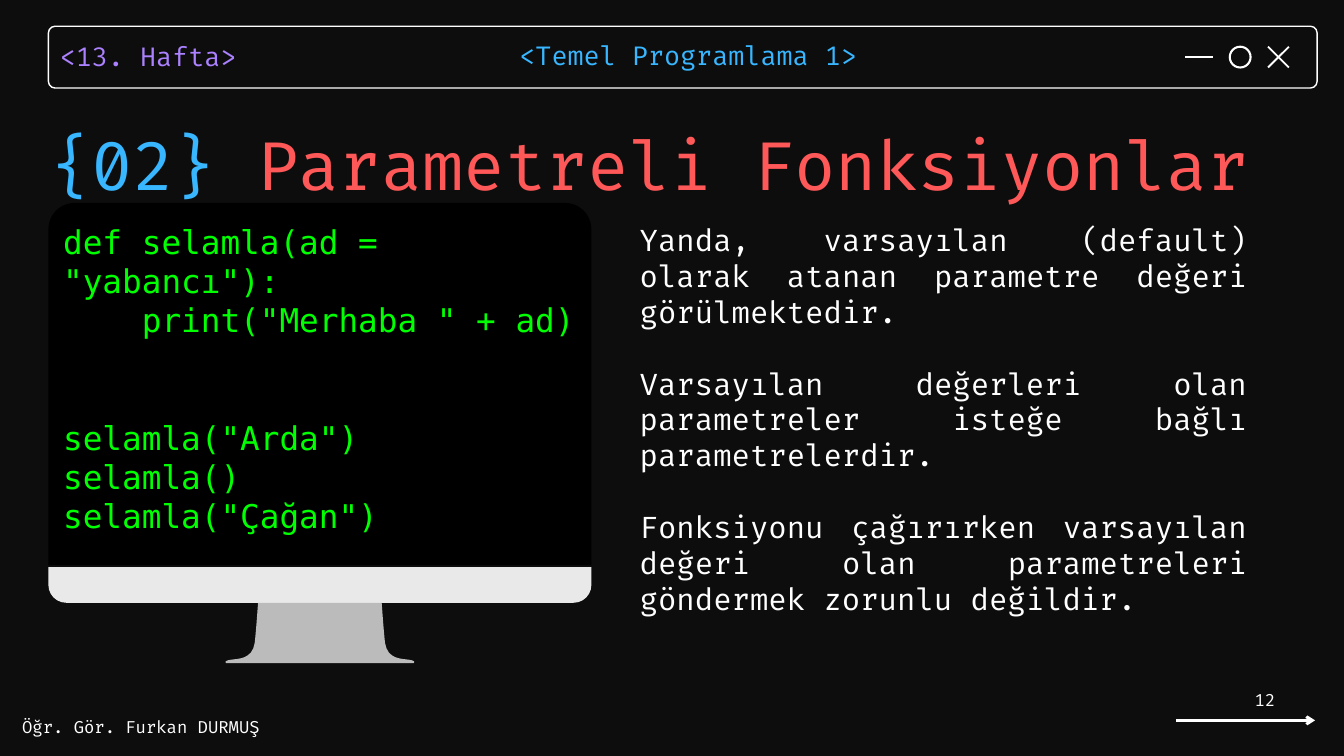
from pptx import Presentation
from pptx.dml.color import RGBColor
from pptx.enum.shapes import MSO_CONNECTOR, MSO_SHAPE
from pptx.enum.text import MSO_ANCHOR, MSO_AUTO_SIZE, PP_ALIGN
from pptx.oxml.ns import qn
from pptx.util import Inches, Pt
from lxml import etree

STRAIGHT = MSO_CONNECTOR.STRAIGHT
LEFT, RIGHT, JUSTIFY = PP_ALIGN.LEFT, PP_ALIGN.RIGHT, PP_ALIGN.JUSTIFY
TOP, MIDDLE = MSO_ANCHOR.TOP, MSO_ANCHOR.MIDDLE
ROUNDED, OVAL = MSO_SHAPE.ROUNDED_RECTANGLE, MSO_SHAPE.OVAL
RECTANGLE, TOP_ROUNDED = MSO_SHAPE.RECTANGLE, MSO_SHAPE.ROUND_2_SAME_RECTANGLE
FIRA, MONO = "Fira Code", "DejaVu Sans Mono"
WHITE, BLACK, BLUE, PURPLE = "FFFFFF", "000000", "38B6FF", "AB81FF"
RED, GREEN, BACKGROUND = "FF5858", "00FF00", "0D0D0D"
CHIN_GREY, STAND_GREY = "E9E9E9", "BBBBBB"


def color(value):
    return RGBColor.from_string(value)


def fill_frame(frame, paragraphs, size, font=FIRA, align=LEFT, anchor=TOP, spacing=None):
    """Each paragraph is (space before in points, [(text, colour), ...])."""
    frame.word_wrap = True
    frame.auto_size = MSO_AUTO_SIZE.NONE
    frame.vertical_anchor = anchor
    frame.margin_left = frame.margin_right = frame.margin_top = frame.margin_bottom = 0
    for index, (before, spans) in enumerate(paragraphs):
        para = frame.add_paragraph() if index else frame.paragraphs[0]
        para.alignment = align
        if before:
            para.space_before = Pt(before)
        if spacing:
            para.line_spacing = Pt(spacing)
        for text, hue in spans:
            span = para.add_run()
            span.text = text
            span.font.name, span.font.size = font, Pt(size)
            span.font.color.rgb = color(hue)


def add_text(page, box, paragraphs, size, **options):
    label = page.shapes.add_textbox(*map(Inches, box))
    fill_frame(label.text_frame, paragraphs, size, **options)


def paint(shape, fill=None, line=None, width=1):
    shape.shadow.inherit = False
    if fill:
        shape.fill.solid()
        shape.fill.fore_color.rgb = color(fill)
    else:
        shape.fill.background()
    if line:
        shape.line.color.rgb = color(line)
        shape.line.width = Pt(width)
    else:
        shape.line.fill.background()


def add_block(page, kind, box, adjustments=(), **look):
    shape = page.shapes.add_shape(kind, *map(Inches, box))
    for index, value in enumerate(adjustments):
        shape.adjustments[index] = value
    paint(shape, **look)
    return shape


def add_line(page, start, end, width, arrow=False):
    line = page.shapes.add_connector(STRAIGHT, *map(Inches, (*start, *end)))
    line.line.color.rgb = color(WHITE)
    line.line.width = Pt(width)
    if arrow:
        etree.SubElement(line.line._get_or_add_ln(), qn("a:tailEnd"), type="arrow")
    etree.SubElement(line._element.spPr, qn("a:effectLst"))


def curve(start, first, second, end, steps=10):
    """Points along a cubic Bezier curve, without its start."""
    points = []
    for step in range(1, steps + 1):
        t = step / steps
        weights = ((1 - t) ** 3, 3 * t * (1 - t) ** 2, 3 * t * t * (1 - t), t ** 3)
        points.append(tuple(
            sum(weight * value for weight, value in zip(weights, axis))
            for axis in zip(start, first, second, end)))
    return points


def add_window_bar(page, box):
    left, top, width, height = box
    add_block(page, ROUNDED, box, [0.1 / height], line=WHITE, width=1.5)
    add_text(page, (left + 0.17, top + 0.13, 3.4, 0.53),
             [(0, [("<13. Hafta>", PURPLE)])], 28, spacing=39.2)
    add_text(page, (left + 7.01, top + 0.12, 5.29, 0.53),
             [(0, [("<Temel Programlama 1>", BLUE)])], 28, spacing=39.2)

    icon, middle, right = 0.31, top + height / 2, left + width
    upper, lower = middle - icon / 2, middle + icon / 2
    cross = right - 0.73
    add_line(page, (right - 1.96, middle), (right - 1.55, middle), 2)
    add_block(page, OVAL, (right - 1.3, upper, icon, icon), line=WHITE, width=2.25)
    add_line(page, (cross, upper), (cross + icon, lower), 2)
    add_line(page, (cross + icon, upper), (cross, lower), 2)


def add_title(page, box):
    title = page.shapes.title
    title.left, title.top, title.width, title.height = map(Inches, box)
    spans = [("{02} ", BLUE), ("Parametreli Fonksiyonlar", RED)]
    fill_frame(title.text_frame, [(0, spans)], 72, spacing=102.6)


def add_stand(page, center, top):
    height = 0.9
    side = [(0.92, 0)]
    for points in (((0.92, 0), (0.92, 0), (0.95, 0.43), (0.97, 0.6)),
                   ((0.97, 0.6), (1.02, 0.9), (1.31, 0.81), (1.4, 0.87)),
                   ((1.4, 0.87), (1.41, 0.88), (1.4, height), (1.39, height))):
        side += curve(*points)
    outline = [(center + x, top + y) for x, y in side]
    outline += [(center - x, top + y) for x, y in reversed(side)]
    builder = page.shapes.build_freeform(
        *(Inches(value) for value in outline[0]), scale=1)
    builder.add_line_segments(
        [(Inches(x), Inches(y)) for x, y in outline[1:]], close=True)
    paint(builder.convert_to_shape(), fill=STAND_GREY)


def add_monitor(page, box):
    left, top, width, height = box
    bezel, chin = 5.39, 0.53
    chin_top = top + height - chin
    add_block(page, TOP_ROUNDED, (left, top, width, bezel), [0.39 / bezel, 0], fill=BLACK)
    add_block(page, TOP_ROUNDED, (left, chin_top, width, chin), [0, 0.5], fill=CHIN_GREY)
    add_stand(page, left + width / 2, top + height)
    add_block(page, RECTANGLE, (left + 0.38, top + 0.28, 7.43, 4.97),
              fill=BLACK, line=BLACK, width=2)
    code = [(0, 'def selamla(ad = "yabancı"):'),
            (0, '    print("Merhaba " + ad)'),
            (84, 'selamla("Arda")'),
            (0, "selamla()"),
            (0, 'selamla("Çağan")')]
    add_text(page, (left + 0.22, top + 0.28, 7.64, 4.12),
             [(before, [(text, GREEN)]) for before, text in code], 35, font=MONO)


def add_explanation(page, box):
    texts = ["Yanda, varsayılan (default) olarak atanan parametre değeri görülmektedir.",
             "Varsayılan değerleri olan parametreler isteğe bağlı parametrelerdir.",
             "Fonksiyonu çağırırken varsayılan değeri olan parametreleri "
             "göndermek zorunlu değildir."]
    paragraphs = [(38.4 if index else 0, [(text, WHITE)])
                  for index, text in enumerate(texts)]
    add_text(page, box, paragraphs, 32, align=JUSTIFY)


def add_footer(page, box):
    left, top, width, height = box
    right = left + width
    add_text(page, (left, top + 0.46, 3.67, 0.3),
             [(0, [("Öğr. Gör. Furkan DURMUŞ", WHITE)])], 18)
    add_text(page, (right - 2.72, top, 2.13, 0.4),
             [(0, [("12", WHITE)])], 18, align=RIGHT, anchor=MIDDLE)
    add_line(page, (right - 2.07, top + 0.51), (right, top + 0.51), 3, arrow=True)


def main():
    deck = Presentation()
    deck.slide_width, deck.slide_height = Inches(20), Inches(11.25)
    page = deck.slides.add_slide(deck.slide_layouts[5])
    page.background.fill.solid()
    page.background.fill.fore_color.rgb = color(BACKGROUND)
    add_window_bar(page, (0.72, 0.39, 18.88, 0.92))
    add_title(page, (0.75, 1.61, 19.25, 1.38))
    add_monitor(page, (0.72, 3.02, 8.08, 5.95))
    add_explanation(page, (9.52, 3.3, 9.04, 5.92))
    add_footer(page, (0.33, 10.21, 19.24, 0.76))
    deck.save("out.pptx")


if __name__ == "__main__":
    main()
